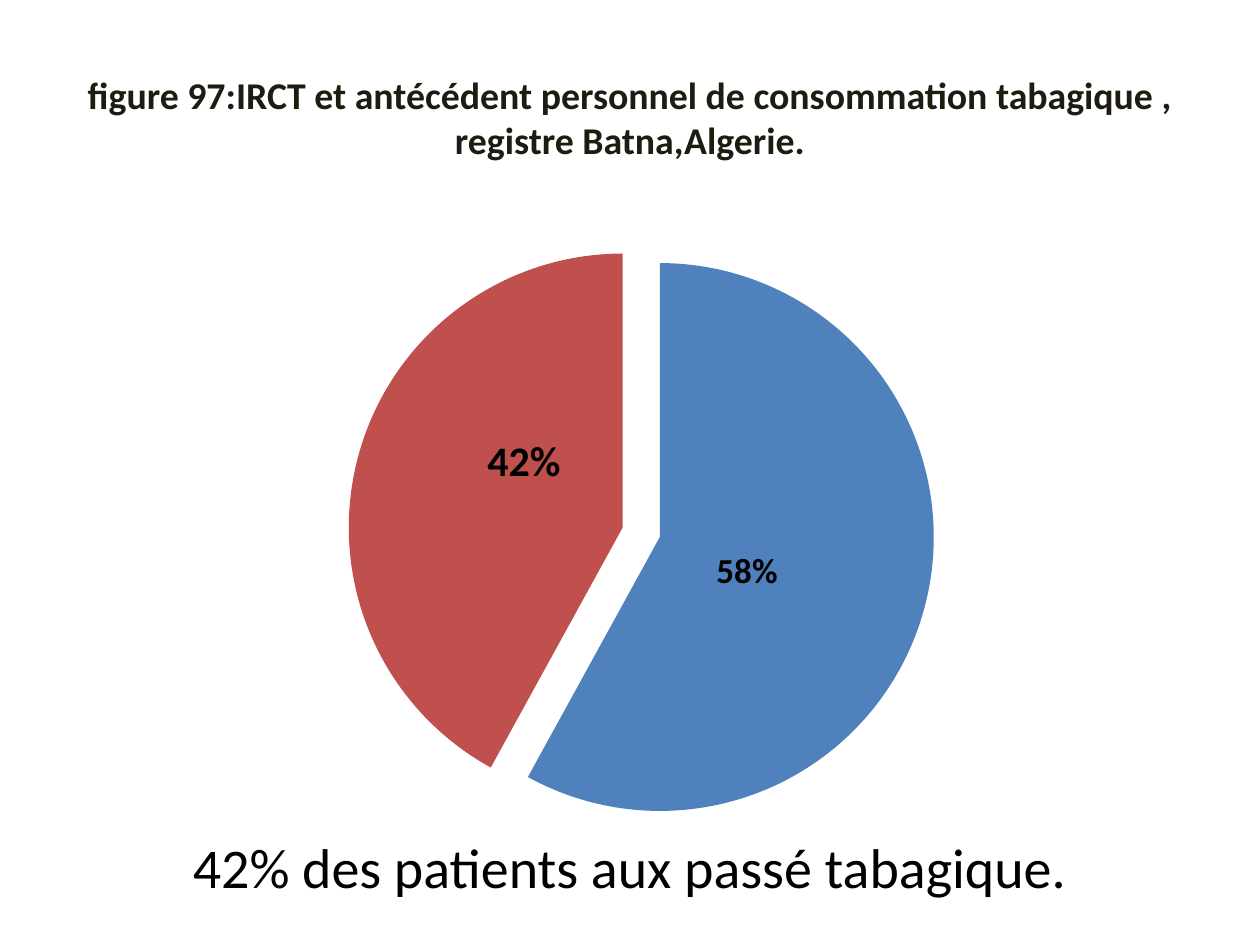
from dataclasses import dataclass

from lxml.etree import Element, SubElement
from pptx import Presentation
from pptx.chart.data import CategoryChartData
from pptx.dml.color import RGBColor
from pptx.enum.chart import XL_CHART_TYPE as ChartType, XL_LABEL_POSITION as LabelPosition
from pptx.enum.text import MSO_ANCHOR as Anchor, PP_ALIGN as Align
from pptx.oxml.ns import qn
from pptx.util import Inches, Pt

FONT = "Calibri"
BLACK = RGBColor(0x00, 0x00, 0x00)
DARK = RGBColor(0x1E, 0x1C, 0x11)
BLUE = RGBColor(0x4F, 0x81, 0xBD)
RED = RGBColor(0xC0, 0x50, 0x4D)
EXPLOSION = 7


@dataclass(frozen=True)
class TextBlock:
    lines: tuple[str, ...]
    top: float
    size: float
    color: RGBColor
    bold: bool = False


@dataclass(frozen=True)
class Slice:
    category: str
    value: int
    color: RGBColor
    label_size: float
    label_shift: tuple[float, float]


TEXTS = (
    TextBlock(
        ("figure 97:IRCT et antécédent personnel de consommation tabagique ,",
         "registre Batna,Algerie."),
        0.3, 21.6, DARK, True,
    ),
    TextBlock(("42% des patients aux passé tabagique.",), 6.25, 32, BLACK),
)
SLICES = (
    Slice("1", 58, BLUE, 20, (-0.04, 0)),
    Slice("2", 42, RED, 24, (0.03, -0.05)),
)


def make_layout(**settings: str | float) -> Element:
    layout = Element(qn("c:layout"))
    manual = SubElement(layout, qn("c:manualLayout"))
    for name, value in settings.items():
        SubElement(manual, qn(f"c:{name}")).set("val", str(value))
    return layout


def add_text(slide, block: TextBlock) -> None:
    shape = slide.shapes.add_textbox(Inches(0.5), Inches(block.top), Inches(9), Inches(1.25))
    frame = shape.text_frame
    frame.word_wrap = True
    frame.vertical_anchor = Anchor.MIDDLE
    frame.text = "\n".join(block.lines)
    for paragraph in frame.paragraphs:
        paragraph.alignment = Align.CENTER
        paragraph.font.name = FONT
        paragraph.font.size = Pt(block.size)
        paragraph.font.bold = block.bold
        paragraph.font.color.rgb = block.color


def style_slice(series, index: int, part: Slice) -> None:
    point = series.points[index]
    point.format.fill.solid()
    point.format.fill.fore_color.rgb = part.color
    label = point.data_label
    label.font.name = FONT
    label.font.size = Pt(part.label_size)
    label.font.bold = True
    label.font.color.rgb = BLACK
    label.position = LabelPosition.CENTER
    element = series.data_labels._element.findall(qn("c:dLbl"))[index]
    element.find(qn("c:showVal")).set("val", "0")
    element.find(qn("c:showPercent")).set("val", "1")
    x, y = part.label_shift
    element.find(qn("c:idx")).addnext(make_layout(x=x, y=y))


def add_pie(slide) -> None:
    data = CategoryChartData()
    data.categories = [part.category for part in SLICES]
    data.add_series("Series 1", [part.value for part in SLICES])
    chart = slide.shapes.add_chart(
        ChartType.PIE, Inches(0.5), Inches(1.75), Inches(9), Inches(4.95), data
    ).chart
    chart.has_title = False
    chart.has_legend = False
    chart.font.name = FONT
    chart.font.size = Pt(10)
    chart.font.color.rgb = BLACK
    plot = chart.plots[0]
    plot.vary_by_categories = True
    series = plot.series[0]
    explosion = Element(qn("c:explosion"))
    explosion.set("val", str(EXPLOSION))
    series._element.find(qn("c:tx")).addnext(explosion)

    labels = series.data_labels
    labels.show_value = False
    labels.show_percentage = True
    labels.font.size = Pt(12)
    labels.font.bold = True
    for index, part in enumerate(SLICES):
        style_slice(series, index, part)

    plot_area = chart._chartSpace.find(f".//{qn('c:plotArea')}")
    for layout in plot_area.findall(qn("c:layout")):
        plot_area.remove(layout)
    plot_area.insert(0, make_layout(
        layoutTarget="inner", xMode="edge", yMode="edge", x=0.25, y=0.03, w=0.52, h=0.94
    ))


def main() -> None:
    presentation = Presentation()
    presentation.slide_width = Inches(10)
    presentation.slide_height = Inches(7.5)
    slide = presentation.slides.add_slide(presentation.slide_layouts[6])
    add_pie(slide)
    for block in TEXTS:
        add_text(slide, block)
    presentation.save("out.pptx")


if __name__ == "__main__":
    main()
